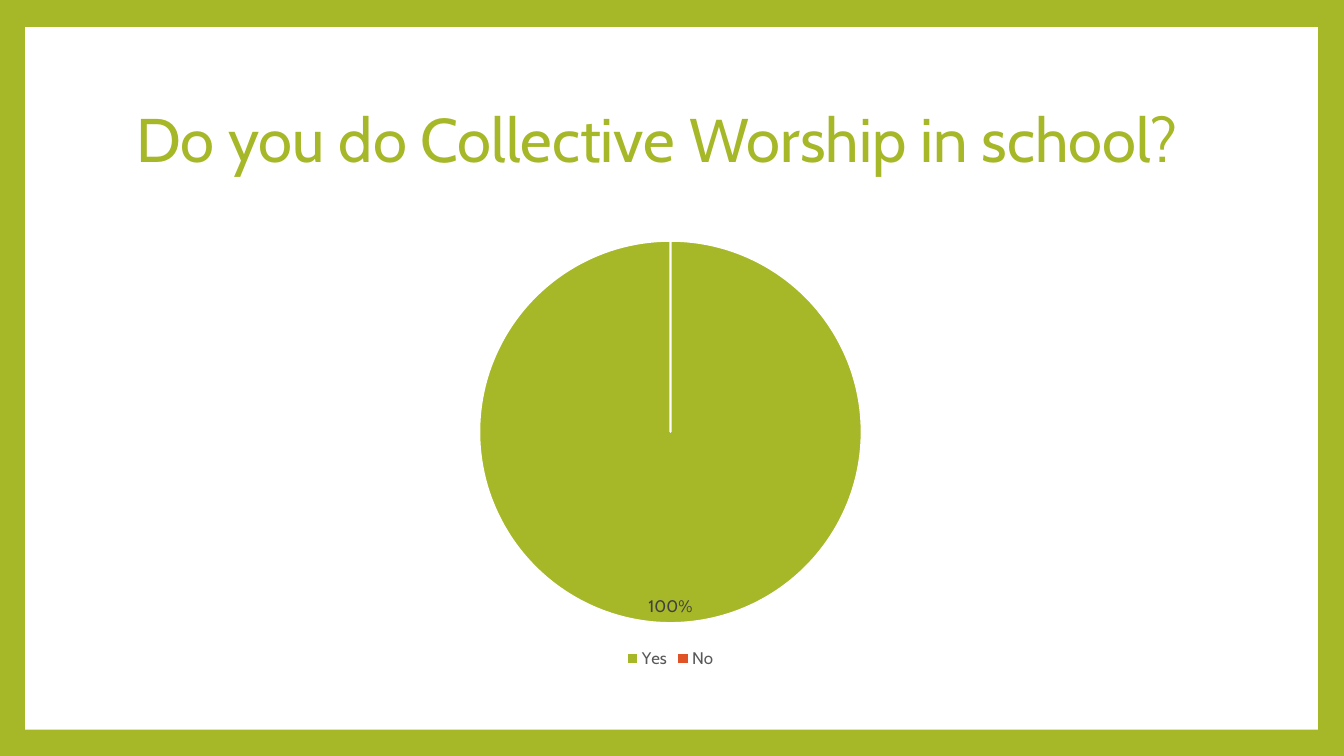
from pptx import Presentation
from pptx.chart.data import CategoryChartData
from pptx.dml.color import RGBColor
from pptx.enum.chart import XL_CHART_TYPE, XL_LABEL_POSITION, XL_LEGEND_POSITION
from pptx.enum.shapes import MSO_SHAPE
from pptx.enum.text import MSO_ANCHOR, PP_ALIGN
from pptx.util import Inches, Pt

COLOURS = {
    "green": "A6B727",
    "orange": "DF5327",
    "white": "FFFFFF",
    "label": "404040",
    "legend": "595959",
}
FONT = "Cabin"


class SurveySlide:
    def __init__(self, presentation):
        self.slide = presentation.slides.add_slide(presentation.slide_layouts[5])
        self.paint(self.slide.background.fill, "green")

    def paint(self, fill, colour):
        fill.solid()
        fill.fore_color.rgb = RGBColor.from_string(COLOURS[colour])

    def style(self, font, size, colour):
        font.name = FONT
        font.size = Pt(size)
        font.color.rgb = RGBColor.from_string(COLOURS[colour])

    def panel(self, left, top, width, height):
        panel = self.slide.shapes.add_shape(
            MSO_SHAPE.RECTANGLE, Inches(left), Inches(top), Inches(width), Inches(height)
        )
        panel.shadow.inherit = False
        self.paint(panel.fill, "white")
        panel.line.fill.background()
        tree = self.slide.shapes._spTree
        tree.insert(2, panel._element)

    def title(self, question, left, top, width, height):
        title = self.slide.shapes.title
        title.left, title.top = Inches(left), Inches(top)
        title.width, title.height = Inches(width), Inches(height)
        frame = title.text_frame
        frame.text = question
        frame.word_wrap = True
        frame.vertical_anchor = MSO_ANCHOR.MIDDLE
        paragraph = frame.paragraphs[0]
        paragraph.alignment = PP_ALIGN.LEFT
        paragraph.line_spacing = 0.9
        self.style(paragraph.font, 44, "green")

    def pie(self, answers, slice_colours, left, top, width, height):
        data = CategoryChartData()
        data.categories = list(answers)
        data.add_series("Series 1", list(answers.values()))
        chart = self.slide.shapes.add_chart(
            XL_CHART_TYPE.PIE, Inches(left), Inches(top), Inches(width), Inches(height), data
        ).chart
        chart.has_title = False
        chart.font.name = FONT
        chart.font.size = Pt(10)
        chart.has_legend = True
        chart.legend.position = XL_LEGEND_POSITION.BOTTOM
        chart.legend.include_in_layout = False
        self.style(chart.legend.font, 12, "legend")

        plot = chart.plots[0]
        plot.vary_by_categories = True
        for index, colour in enumerate(slice_colours):
            answer = plot.series[0].points[index].format
            self.paint(answer.fill, colour)
            answer.line.width = Pt(1.5)
            answer.line.color.rgb = RGBColor.from_string(COLOURS["white"])

        labels = plot.series[0].data_labels
        labels.show_percentage = True
        labels.show_value = False
        labels.number_format = "0%;;;"
        labels.number_format_is_linked = False
        labels.position = XL_LABEL_POSITION.INSIDE_END
        self.style(labels.font, 12, "label")


def main():
    presentation = Presentation()
    presentation.slide_width = Inches(13.33)
    presentation.slide_height = Inches(7.5)
    survey = SurveySlide(presentation)
    survey.panel(0.25, 0.27, 12.82, 6.97)
    survey.title("Do you do Collective Worship in school?", 1.25, 0.67, 10.8, 1.48)
    survey.pie({"Yes": 100, "No": 0}, ["green", "orange"], 1.25, 2.25, 10.8, 4.42)
    presentation.save("out.pptx")


if __name__ == "__main__":
    main()
